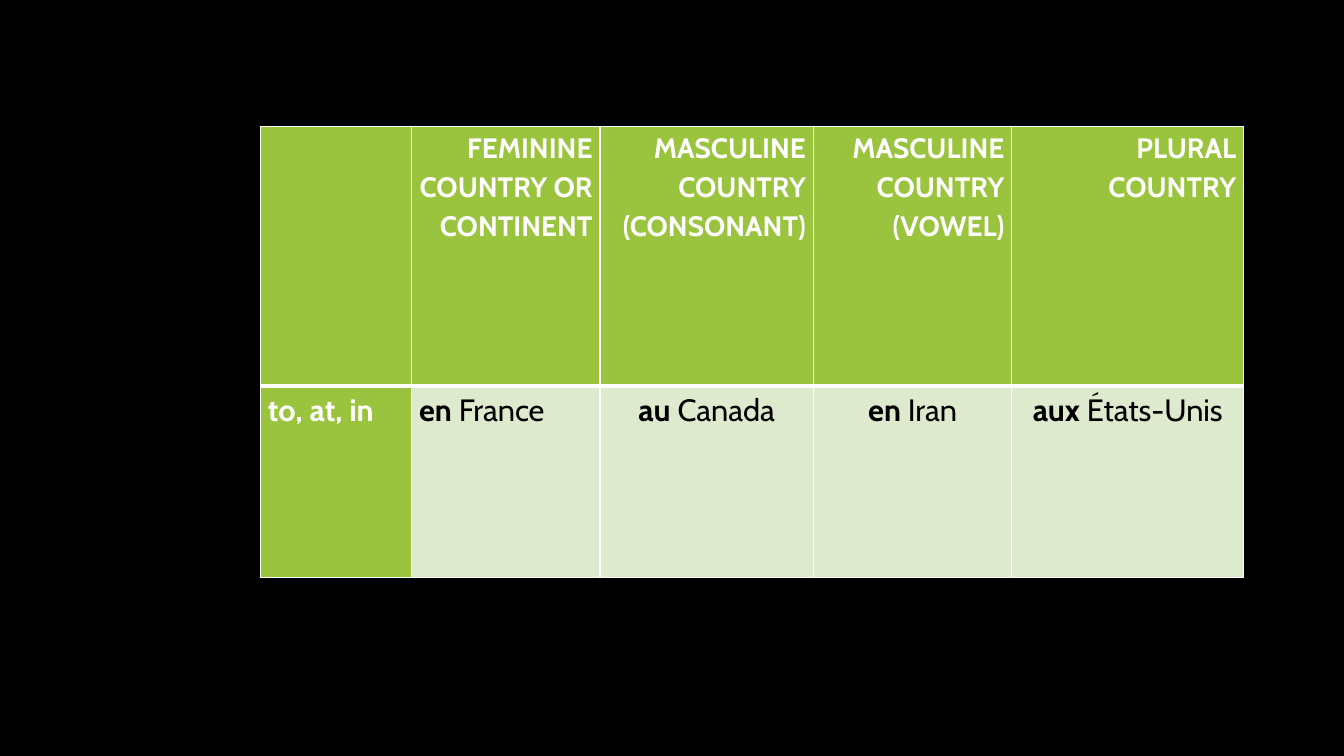
from dataclasses import dataclass

from lxml import etree
from pptx import Presentation
from pptx.dml.color import RGBColor
from pptx.enum import text as t
from pptx.oxml import ns
from pptx.util import Cm, Pt

WHITE, BLACK, GREEN, PALE = "FFFFFF", "000000", "9AC43E", "DEEACE"
LEFT, RIGHT, MID = t.PP_ALIGN.LEFT, t.PP_ALIGN.RIGHT, t.PP_ALIGN.CENTER
WIDTHS = [3.81, 4.75, 5.38, 5, 5.84]
HEIGHTS = [6.55, 4.83]


@dataclass
class Entry:
    bold: str = ""
    plain: str = ""
    size: float = 22
    ink: str = BLACK
    fill: str = PALE
    align: t.PP_ALIGN = MID


def head(label: str) -> Entry:
    return Entry(label, size=20, ink=WHITE, fill=GREEN, align=RIGHT)


ROWS = [
    [
        head(""),
        head("FEMININE COUNTRY OR CONTINENT"),
        head("MASCULINE COUNTRY (CONSONANT)"),
        head("MASCULINE COUNTRY (VOWEL)"),
        head("PLURAL COUNTRY"),
    ],
    [
        Entry("to, at, in", ink=WHITE, fill=GREEN, align=LEFT),
        Entry("en ", "France", align=LEFT),
        Entry("au ", "Canada"),
        Entry("en ", "Iran"),
        Entry("aux ", "États-Unis"),
    ],
]


def color(code: str) -> RGBColor:
    return RGBColor.from_string(code)


def write(para, words: str, *, size: float, ink: str, bold: bool) -> None:
    run = para.add_run()
    run.text = words
    run.font.name = "Cabin"
    run.font.size = Pt(size)
    run.font.bold = bold
    run.font.color.rgb = color(ink)


def border(cell, side: str, width: float) -> None:
    props = cell._tc.get_or_add_tcPr()
    line = etree.SubElement(props, ns.qn(f"a:ln{side}"), w=str(Pt(width)))
    fill = etree.SubElement(line, ns.qn("a:solidFill"))
    etree.SubElement(fill, ns.qn("a:srgbClr"), val=WHITE)


def draw(cell, entry: Entry, top: float, bottom: float) -> None:
    for side, width in zip("LRTB", (1, 1, top, bottom)):
        border(cell, side, width)
    cell.fill.solid()
    cell.fill.fore_color.rgb = color(entry.fill)
    cell.margin_left = cell.margin_right = Cm(0.19)
    cell.margin_top = cell.margin_bottom = 0
    para = cell.text_frame.paragraphs[0]
    para.alignment = entry.align
    para.line_spacing = 1.15
    for words, bold in ((entry.bold, True), (entry.plain, False)):
        if words:
            write(para, words, size=entry.size, ink=entry.ink, bold=bold)


def main() -> None:
    deck = Presentation()
    deck.slide_width, deck.slide_height = Cm(33.87), Cm(19.05)
    slide = deck.slides.add_slide(deck.slide_layouts[6])
    slide.background.fill.solid()
    slide.background.fill.fore_color.rgb = color(BLACK)
    frame = slide.shapes.add_table(
        len(HEIGHTS), len(WIDTHS), Cm(6.56), Cm(3.18), Cm(sum(WIDTHS)), Cm(sum(HEIGHTS))
    )
    table = frame.table
    for column, width in zip(table.columns, WIDTHS):
        column.width = Cm(width)
    for row, height in zip(table.rows, HEIGHTS):
        row.height = Cm(height)
    edges = [1, 3, 1]
    for i, entries in enumerate(ROWS):
        for j, entry in enumerate(entries):
            draw(table.cell(i, j), entry, edges[i], edges[i + 1])
    deck.save("out.pptx")


if __name__ == "__main__":
    main()
